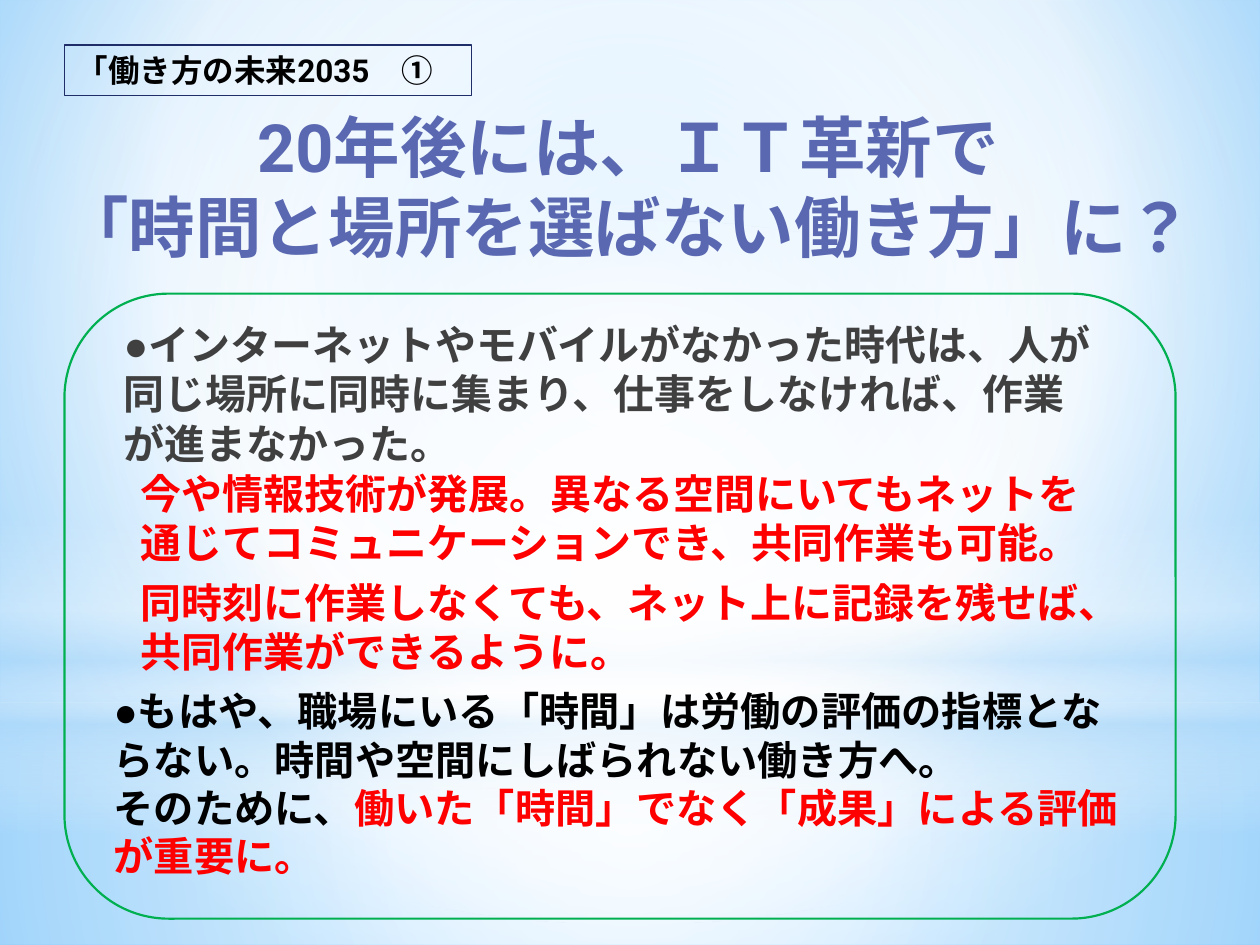
import copy

import pptx
import pptx.dml.color
import pptx.enum.lang
import pptx.enum.shapes
import pptx.enum.text
import pptx.oxml
import pptx.oxml.ns
import pptx.util

Cm = pptx.util.Cm
Pt = pptx.util.Pt
qn = pptx.oxml.ns.qn
SHAPE = pptx.enum.shapes.MSO_SHAPE
ALIGN = pptx.enum.text.PP_ALIGN

THEME = {
    "heading_font": "Roboto", "body_font": "Arial",
    "title_size": 38, "label_size": 18, "body_size": 23.4, "closing_size": 23,
    "title": "5968B0", "muted": "404040", "black": "000000", "accent": "FF0000",
    "frame": "00B050", "label_line": "1F2E69",
}

# Each paragraph is a list of (text, colour name) runs.
LABEL = [[("「働き方の未来2035\u3000①".replace("\u3000", "　"), "black")]]
TITLE = [[("20年後には、ＩＴ革新で\v「時間と場所を選ばない働き方」に？", "title")]]
PAST = [[("●インターネットやモバイルがなかった時代は、人が同じ場所に同時に集まり、"
          "仕事をしなければ、作業が進まなかった。", "muted")]]
PRESENT = [
    [("今や情報技術が発展。異なる空間にいてもネットを通じてコミュニケーションでき、"
      "共同作業も可能。", "accent")],
    [("同時刻に作業しなくても、ネット上に記録を残せば、共同作業ができるように。", "accent")],
]
CLOSING = [
    [("●もはや、職場にいる「時間」は労働の評価の指標とならない。"
      "時間や空間にしばられない働き方へ。", "black")],
    [("そのために、", "black"),
     ("働いた「時間」でなく「成果」による評価が重要に。", "accent")],
]

# Gradient stops are (position %, colour, opacity %); boxes are in cm.
CENTRE = (50, 50, 50, 50)
BACKGROUND = [(0, "9ED5FF", 100), (60, "FFFFFF", 100), (100, "5BB9FF", 100)]
GLOWS = [
    (SHAPE.RECTANGLE, (0, 14.17, 25.4, 4.88), CENTRE,
     [(0, "FFFFFF", 91), (37, "FFFFFF", 76), (100, "B4DCFA", 79)]),
    (SHAPE.RECTANGLE, (0, 0, 25.4, 14.17), CENTRE,
     [(0, "FFFFFF", 89), (48, "FFFFFF", 62), (100, "B4DCFA", 79)]),
    (SHAPE.RECTANGLE, (0, 10.46, 25.4, 6.35), None,
     [(0, "FFFFFF", 0), (29, "FFFFFF", 30), (45, "B4DCFA", 40),
      (55, "FFFFFF", 26), (65, "B4DCFA", 60), (100, "FFFFFF", 0)]),
    (SHAPE.OVAL, (0, 4.45, 25.4, 14.17), CENTRE,
     [(0, "FFFFFF", 100), (56, "FFFFFF", 0)]),
]


def rgb(name):
    return pptx.dml.color.RGBColor.from_string(THEME[name])


def set_gradient(owner, element, stops, focus):
    """Fill owner with a circular gradient around focus, or a vertical one without it."""
    owner.fill.solid()
    solid = element.find(".//" + qn("a:solidFill"))
    gs = "".join(
        f'<a:gs pos="{pos * 1000}"><a:srgbClr val="{colour}">'
        f'<a:alpha val="{opacity * 1000}"/></a:srgbClr></a:gs>'
        for pos, colour, opacity in stops)
    if focus:
        sides = " ".join(f'{side}="{v * 1000}"' for side, v in zip("ltrb", focus))
        direction = f'<a:path path="circle"><a:fillToRect {sides}/></a:path>'
    else:
        direction = '<a:lin ang="5400000" scaled="0"/>'
    solid.getparent().replace(solid, pptx.oxml.parse_xml(
        f'<a:gradFill {pptx.oxml.ns.nsdecls("a")} rotWithShape="1">'
        f'<a:gsLst>{gs}</a:gsLst>{direction}</a:gradFill>'))


def place(sp, box):
    sp.left, sp.top, sp.width, sp.height = (Cm(v) for v in box)


def add_shape(s, kind, box):
    sp = s.shapes.add_shape(kind, *(Cm(v) for v in box))
    sp.shadow.inherit = False
    return sp


def add_outline(s, kind, box, colour, width):
    sp = add_shape(s, kind, box)
    sp.fill.background()
    sp.line.color.rgb = rgb(colour)
    sp.line.width = Pt(width)
    return sp


def format_run(r, font, size, colour):
    r.font.name = font
    r.font.size = Pt(size)
    r.font.bold = True
    r.font.color.rgb = rgb(colour)
    r.font.language_id = pptx.enum.lang.MSO_LANGUAGE_ID.JAPANESE
    east_asian = copy.deepcopy(r.font._element.find(qn("a:latin")))
    east_asian.tag = qn("a:ea")
    r.font._element.find(qn("a:latin")).addnext(east_asian)


def write(sp, paragraphs, font, size, align=ALIGN.LEFT, indent=0, after=0):
    tf = sp.text_frame
    tf.word_wrap = True
    tf.auto_size = pptx.enum.text.MSO_AUTO_SIZE.NONE
    tf.vertical_anchor = pptx.enum.text.MSO_ANCHOR.TOP
    for i, runs in enumerate(paragraphs):
        p = tf.add_paragraph() if i else tf.paragraphs[0]
        p.alignment = align
        p.space_before, p.space_after = Pt(0), Pt(after)
        pPr = p._p.get_or_add_pPr()
        pPr.set("marL", str(Cm(indent)))
        pPr.set("indent", "0")
        pPr.append(pptx.oxml.parse_xml(f'<a:buNone {pptx.oxml.ns.nsdecls("a")}/>'))
        for text, colour in runs:
            first, *rest = text.split("\v")
            p.add_run().text = first
            for line in rest:
                p.add_line_break()
                p.add_run().text = line
            for r in p.runs[-1 - len(rest):]:
                format_run(r, THEME[font], THEME[size], colour)
        for br in p._p.findall(qn("a:br")):
            br.append(copy.deepcopy(p.runs[0].font._element))


def main():
    prs = pptx.Presentation()
    prs.slide_width, prs.slide_height = Cm(25.4), Cm(19.05)
    s = prs.slides.add_slide(prs.slide_layouts[1])

    set_gradient(s.background, s.element, BACKGROUND, (20, 10, 20, 60))
    for i, (kind, box, focus, stops) in enumerate(GLOWS):
        sp = add_shape(s, kind, box)
        sp.line.fill.background()
        set_gradient(sp, sp.element, stops, focus)
        s.shapes.element.insert(2 + i, sp.element)  # behind the placeholders

    title, body = s.shapes.title, s.placeholders[1]
    place(title, (0.56, 2.01, 24.21, 3.99))
    write(title, TITLE, "heading_font", "title_size", ALIGN.CENTER)
    place(body, (2.11, 6.32, 20.4, 3))
    write(body, PAST, "body_font", "body_size", indent=0.13)

    add_outline(s, SHAPE.ROUNDED_RECTANGLE, (1.3, 5.92, 22.4, 12.6), "frame", 1.25)
    label = add_outline(s, SHAPE.RECTANGLE, (1.3, 0.91, 8.2, 1.02), "label_line", 0.75)
    write(label, LABEL, "heading_font", "label_size")

    for box, paragraphs, size, after in (
            ((2.46, 9.32, 20.04, 3.81), PRESENT, "body_size", 6),
            ((1.91, 13.72, 21.21, 4.19), CLOSING, "closing_size", 0)):
        sp = s.shapes.add_textbox(*(Cm(v) for v in box))
        write(sp, paragraphs, "body_font", size, indent=0.13, after=after)

    prs.save("out.pptx")


if __name__ == "__main__":
    main()
